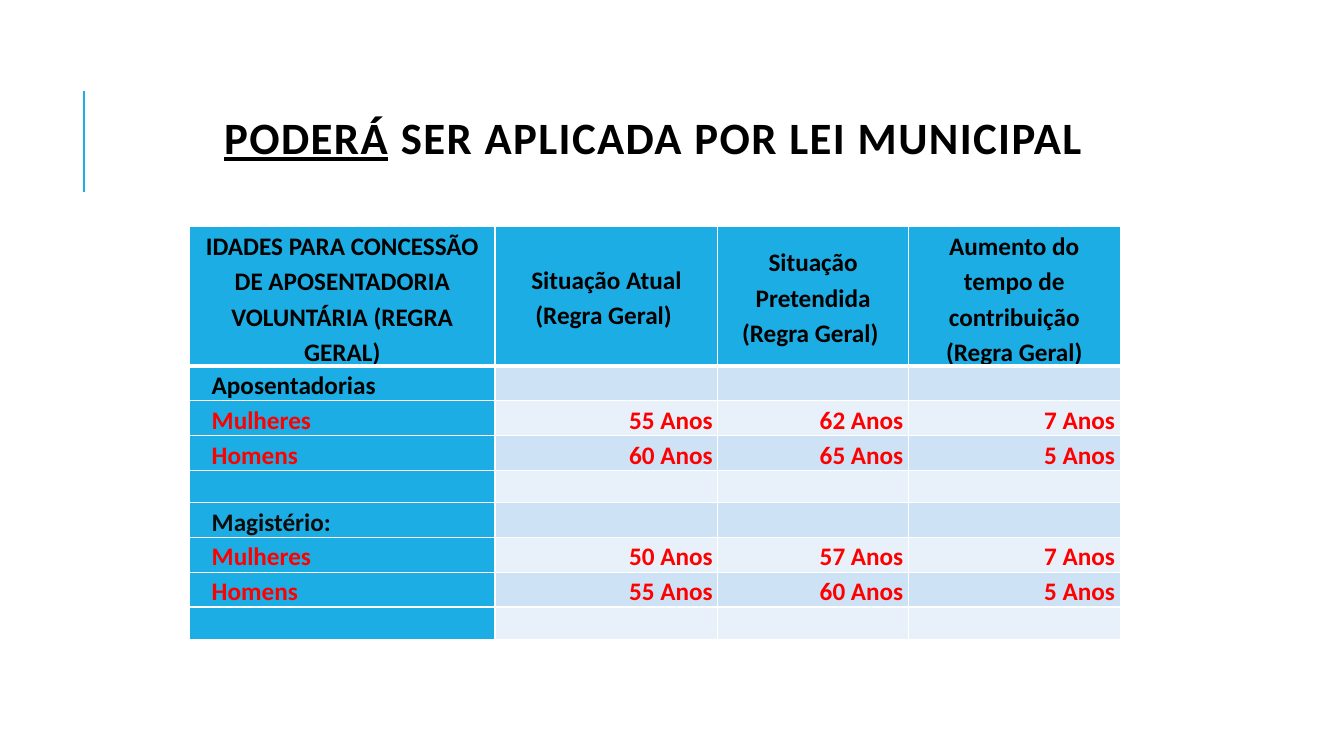
from dataclasses import dataclass

from lxml.etree import SubElement as Sub
from pptx import Presentation
from pptx.dml.color import RGBColor as RGB
from pptx.enum.shapes import MSO_CONNECTOR as Link
from pptx.enum.text import MSO_ANCHOR as Anchor, PP_ALIGN as Align
from pptx.oxml.ns import qn
from pptx.util import Inches, Pt


@dataclass(frozen=True)
class Theme:
    font: str = "Calibri"
    head: int = 32
    body: int = 18
    blue: str = "1CADE4"
    dark: str = "CDE3F5"
    pale: str = "E8F1FA"
    white: str = "FFFFFF"
    black: str = "000000"
    ink: str = "0D0D0D"
    red: str = "FF0000"


THEME = Theme()
COLS = (3.03, 2.21, 1.89, 2.1)
HEADS = (
    "IDADES PARA CONCESSÃO DE APOSENTADORIA VOLUNTÁRIA (REGRA GERAL)",
    "Situação Atual (Regra Geral) ",
    "Situação Pretendida (Regra Geral) ",
    "Aumento do tempo de contribuição (Regra Geral)",
)
ROWS = (
    ("Aposentadorias", (), THEME.black),
    ("Mulheres", (55, 62, 7), THEME.red),
    ("Homens", (60, 65, 5), THEME.red),
    ("", (), THEME.black),
    ("Magistério:", (), THEME.ink),
    ("Mulheres", (50, 57, 7), THEME.red),
    ("Homens", (55, 60, 5), THEME.red),
    ("", (), THEME.black),
)


def add_run(para, text, size, color, line=False):
    run = para.add_run()
    run.text = text
    font = run.font
    font.name, font.size, font.bold = THEME.font, Pt(size), True
    font.underline = line
    font.color.rgb = RGB.from_string(color)
    return run


def add_rule(slide, left, top, height):
    x = Inches(left)
    rule = slide.shapes.add_connector(
        Link.STRAIGHT, x, Inches(top + height), x, Inches(top))
    rule.line.color.rgb = RGB.from_string(THEME.blue)
    rule.line.width = Pt(1.5)
    Sub(rule.element.spPr, qn("a:effectLst"))


def add_title(slide, left, top, width, height):
    box = slide.shapes.add_textbox(
        Inches(left), Inches(top), Inches(width), Inches(height))
    frame = box.text_frame
    frame.word_wrap = True
    frame.vertical_anchor = Anchor.MIDDLE
    para = frame.paragraphs[0]
    para.alignment = Align.CENTER
    para.line_spacing = 0.8
    for text, line in (("PODERÁ", True),
                       (" SER APLICADA POR LEI MUNICIPAL", False)):
        run = add_run(para, text, THEME.head, THEME.black, line)
        run.font._element.set("spc", "100")


def style_cell(cell, fill, top, base):
    props = cell._tc.get_or_add_tcPr()
    for side, width in (("L", 1), ("R", 1), ("T", top), ("B", base)):
        edge = Sub(props, qn(f"a:ln{side}"), w=str(Pt(width)))
        paint = Sub(edge, qn("a:solidFill"))
        Sub(paint, qn("a:srgbClr"), val=THEME.white)
    cell.fill.solid()
    cell.fill.fore_color.rgb = RGB.from_string(fill)
    cell.margin_left = cell.margin_right = Inches(0.05)
    cell.margin_top = cell.margin_bottom = 0


def fill_cell(cell, text, color, align, anchor):
    cell.vertical_anchor = anchor
    para = cell.text_frame.paragraphs[0]
    para.alignment = align
    if text:
        para.line_spacing = 1.15
        add_run(para, text, THEME.body, color)
        if align == Align.LEFT:
            para._p.get_or_add_pPr().set("indent", str(Inches(0.17)))


def add_ages(slide, left, top, width, height):
    grid = slide.shapes.add_table(
        len(ROWS) + 1, len(COLS), Inches(left), Inches(top),
        Inches(width), Inches(height)).table
    for col, size in zip(grid.columns, COLS):
        col.width = Inches(size)
    for i, row in enumerate(grid.rows):
        row.height = Inches(0.32 if i else 0.65)

    for j, text in enumerate(HEADS):
        cell = grid.cell(0, j)
        style_cell(cell, THEME.blue, 1, 3)
        fill_cell(cell, text, THEME.black, Align.CENTER, Anchor.MIDDLE)

    for i, (name, ages, color) in enumerate(ROWS, 1):
        band = THEME.dark if i % 2 else THEME.pale
        for j in range(len(COLS)):
            style_cell(grid.cell(i, j), band if j else THEME.blue,
                       3 if i == 1 else 1, 1)
        fill_cell(grid.cell(i, 0), name, color, Align.LEFT,
                  Anchor.BOTTOM if i == 1 else Anchor.MIDDLE)
        for j, age in enumerate(ages, 1):
            fill_cell(grid.cell(i, j), f"{age} Anos", color,
                      Align.RIGHT, Anchor.BOTTOM)


def main():
    deck = Presentation()
    deck.slide_width, deck.slide_height = Inches(13.33), Inches(7.5)
    slide = deck.slides.add_slide(deck.slide_layouts[6])
    add_rule(slide, 0.83, 0.9, 1)
    add_title(slide, 0.98, 0.96, 11, 0.89)
    add_ages(slide, 1.88, 2.25, sum(COLS), 3.21)
    deck.save("out.pptx")


if __name__ == "__main__":
    main()
